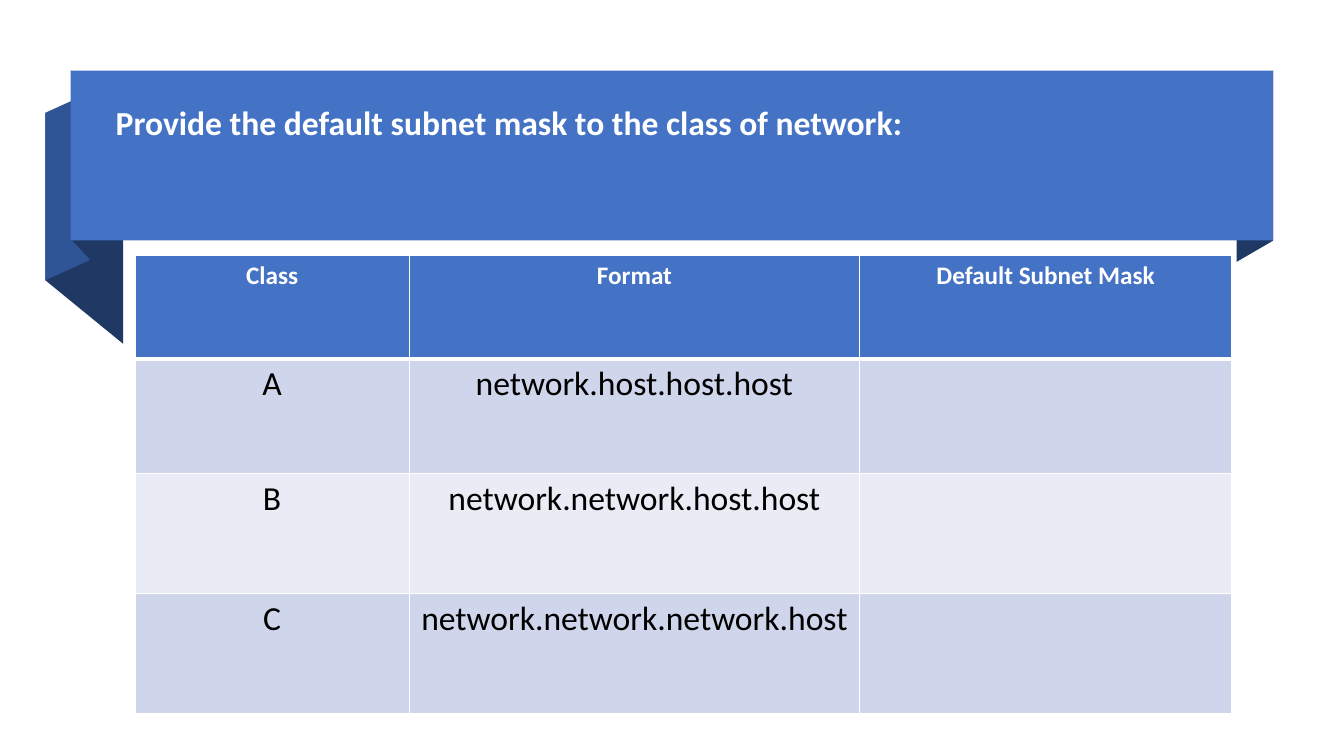
from lxml.etree import SubElement
from pptx import Presentation
from pptx.dml.color import RGBColor
from pptx.enum.shapes import MSO_SHAPE
from pptx.enum.text import MSO_ANCHOR, PP_ALIGN
from pptx.oxml import parse_xml
from pptx.oxml.ns import nsdecls, qn
from pptx.util import Pt

FONT = "Calibri"
COLORS = {
    "banner": "4472C4",
    "fold": "2F5597",
    "fold_dark": "203864",
    "band_odd": "CFD5EA",
    "band_even": "E9EBF5",
    "white": "FFFFFF",
    "black": "000000",
}
COLUMN_WIDTHS = [195.8, 321.8, 265.7]
ROW_HEIGHTS = [74, 82.2, 85.6, 85.6]
ROWS = [
    ("Class", "Format", "Default Subnet Mask"),
    ("A", "network.host.host.host", ""),
    ("B", "network.network.host.host", ""),
    ("C", "network.network.network.host", ""),
]


def rgb(name):
    return RGBColor.from_string(COLORS[name])


def paint(sp, color):
    sp.shadow.inherit = False
    sp.fill.solid()
    sp.fill.fore_color.rgb = rgb(color)
    sp.line.fill.background()


def add_run(p, text, size, color, bold=False):
    r = p.add_run()
    r.text = text
    r.font.name = FONT
    r.font.size = Pt(size)
    r.font.bold = bold
    r.font.color.rgb = rgb(color)


def add_fold(s, x1, top1, x2, top2, height, color):
    """Draw a ribbon fold: two upright edges of equal height, joined by slants."""
    corners = [(x1, top1 + height), (x1, top1), (x2, top2)]
    builder = s.shapes.build_freeform(Pt(x2), Pt(top2 + height))
    builder.add_line_segments([(Pt(x), Pt(y)) for x, y in corners])
    paint(builder.convert_to_shape(), color)


def add_banner(s, left, top, width, height):
    right, outer = left + width, left - 18
    add_fold(s, outer, top + 30.2, left + 37.6, top + 75.6, 119.6, "fold_dark")
    add_fold(s, outer, top + 30.2, left + 13.7, top + 15.8, 119.6, "fold")
    add_fold(s, left + 0.7, top, left + 13.7, top + 13.7, 121, "fold_dark")
    add_fold(s, right - 26, top + 15.1, right, top, 121.5, "fold_dark")
    sp = s.shapes.add_shape(MSO_SHAPE.RECTANGLE, Pt(left), Pt(top), Pt(width), Pt(height))
    paint(sp, "banner")


def add_title(s, left, top, width, height):
    tf = s.shapes.add_textbox(Pt(left), Pt(top), Pt(width), Pt(height)).text_frame
    tf.word_wrap = True
    tf.vertical_anchor = MSO_ANCHOR.TOP
    tf.margin_top = Pt(12.7)
    p = tf.paragraphs[0]
    p.line_spacing = 0.9
    add_run(p, "Provide the default subnet mask to the class of network:", 24, "white", True)


def set_borders(cell, widths):
    """Give the cell white borders; widths are for left, right, top, bottom."""
    tcPr = cell._tc.get_or_add_tcPr()
    for i, (side, width) in enumerate(zip("LRTB", widths)):
        ln = parse_xml(f'<a:ln{side} {nsdecls("a")} w="{Pt(width)}"/>')
        fill = SubElement(ln, qn("a:solidFill"))
        SubElement(fill, qn("a:srgbClr"), val=COLORS["white"])
        tcPr.insert(i, ln)


def add_class_table(s, left, top, width, height):
    table = s.shapes.add_table(len(ROWS), len(COLUMN_WIDTHS), Pt(left), Pt(top),
                               Pt(width), Pt(height)).table
    for column, column_width in zip(table.columns, COLUMN_WIDTHS):
        column.width = Pt(column_width)
    for i, (row, row_height) in enumerate(zip(table.rows, ROW_HEIGHTS)):
        row.height = Pt(row_height)
        header = i == 0
        band = "banner" if header else "band_odd" if i % 2 else "band_even"
        for cell, text in zip(row.cells, ROWS[i]):
            cell.fill.solid()
            cell.fill.fore_color.rgb = rgb(band)
            set_borders(cell, (1, 1, 3 if i == 1 else 1, 3 if header else 1))
            p = cell.text_frame.paragraphs[0]
            p.alignment = PP_ALIGN.CENTER
            if header:
                add_run(p, text, 18, "white", True)
            elif text:
                add_run(p, text, 24, "black")


def main():
    prs = Presentation()
    prs.slide_width, prs.slide_height = Pt(960), Pt(540)
    s = prs.slides.add_slide(prs.slide_layouts[6])
    add_banner(s, 50.4, 50.4, 859, 121.4)
    add_title(s, 75.6, 63.4, 808.6, 95.8)
    add_class_table(s, 96.5, 182.2, sum(COLUMN_WIDTHS), sum(ROW_HEIGHTS))
    prs.save("out.pptx")


if __name__ == "__main__":
    main()
